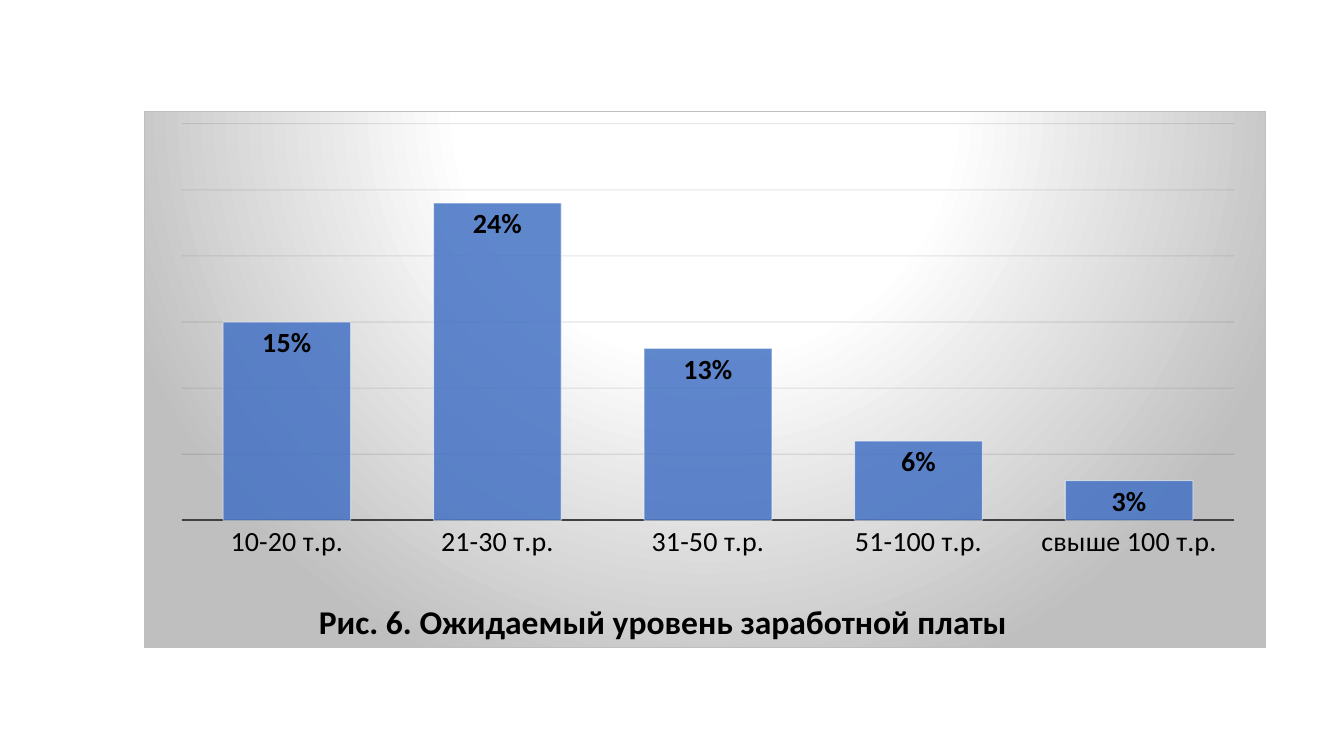
import pptx
import pptx.chart.data
import pptx.dml.color
import pptx.enum.chart
import pptx.oxml
import pptx.oxml.ns
import pptx.util
from pptx.util import Inches

FONT = "Calibri"
CAPTION = "Рис. 6. Ожидаемый уровень заработной платы"
SALARY_SHARES = {
    "10-20 т.р.": 0.15,
    "21-30 т.р.": 0.24,
    "31-50 т.р.": 0.13,
    "51-100 т.р.": 0.06,
    "свыше 100 т.р.": 0.03,
}


def color(value):
    return pptx.dml.color.RGBColor.from_string(value)


def set_font(font, size, bold=False):
    font.name = FONT
    font.size = pptx.util.Pt(size)
    font.bold = bold
    font.color.rgb = color("000000")


def set_fill(fill, value):
    fill.solid()
    fill.fore_color.rgb = color(value)


def set_line(line, value, width):
    set_fill(line.fill, value)
    line.width = pptx.util.Pt(width)


def set_opacity(element, percent):
    """Make every colour inside the XML element partly transparent."""
    for rgb in element.xpath(".//a:srgbClr"):
        alpha = pptx.oxml.parse_xml(
            f'<a:alpha {pptx.oxml.ns.nsdecls("a")} val="{percent * 1000}"/>')
        rgb.append(alpha)


def set_layout(element, index, **parts):
    """Place a chart part by hand, in fractions of the chart area."""
    for layout in element.xpath("./c:layout"):
        element.remove(layout)
    values = "".join(f'<c:{name} val="{value}"/>' for name, value in parts.items())
    element.insert(index, pptx.oxml.parse_xml(
        f'<c:layout {pptx.oxml.ns.nsdecls("c")}>'
        f"<c:manualLayout>{values}</c:manualLayout></c:layout>"))


def set_radial_background(chart):
    stops = "".join(
        f'<a:gs pos="{position * 1000}"><a:srgbClr val="{value}"/></a:gs>'
        for position, value in ((0, "FFFFFF"), (39, "FFFFFF"), (100, "BFBFBF")))
    background = pptx.oxml.parse_xml(
        f'<c:spPr {pptx.oxml.ns.nsdecls("c", "a")}>'
        f'<a:gradFill><a:gsLst>{stops}</a:gsLst><a:path path="circle">'
        '<a:fillToRect l="50000" t="-80000" r="50000" b="180000"/></a:path></a:gradFill>'
        '<a:ln w="9525"><a:solidFill><a:srgbClr val="BFBFBF"/></a:solidFill></a:ln>'
        "</c:spPr>")
    chart.element.xpath("./c:chart")[0].addnext(background)


def format_title(chart):
    chart.has_title = True
    paragraph = chart.chart_title.text_frame.paragraphs[0]
    paragraph.text = CAPTION
    set_font(paragraph.runs[0].font, 24, bold=True)
    set_layout(chart.element.xpath("./c:chart/c:title")[0], 1,
               xMode="edge", yMode="edge", x=0.15, y=0.9)


def format_axes(chart):
    category_axis = chart.category_axis
    category_axis.major_tick_mark = pptx.enum.chart.XL_TICK_MARK.NONE
    set_font(category_axis.tick_labels.font, 20)
    set_line(category_axis.format.line, "404040", 1.5)

    value_axis = chart.value_axis
    value_axis.visible = False
    value_axis.minimum_scale = 0
    value_axis.maximum_scale = 0.3
    value_axis.major_unit = 0.05
    value_axis.has_major_gridlines = True
    set_line(value_axis.major_gridlines.format.line, "0D0D0D", 0.75)
    set_opacity(chart.element.xpath(".//c:majorGridlines")[0], 10)


def format_columns(plot):
    plot.gap_width = 65
    plot.vary_by_categories = False
    series = plot.series[0]
    set_fill(series.format.fill, "4472C4")
    set_opacity(series.format.fill._xPr, 85)
    set_line(series.format.line, "FFFFFF", 0.75)
    set_opacity(series.format.line._ln, 50)
    labels = series.data_labels
    labels.show_value = True
    labels.number_format = "0%"
    labels.number_format_is_linked = False
    labels.position = pptx.enum.chart.XL_LABEL_POSITION.INSIDE_END
    set_font(labels.font, 20, bold=True)


def add_salary_chart(slide):
    data = pptx.chart.data.CategoryChartData(number_format="0%")
    data.categories = list(SALARY_SHARES)
    data.add_series("Series 1", list(SALARY_SHARES.values()))
    chart = slide.shapes.add_chart(
        pptx.enum.chart.XL_CHART_TYPE.COLUMN_CLUSTERED,
        Inches(1.43), Inches(1.1), Inches(11.13), Inches(5.39), data).chart
    set_font(chart.font, 20)
    chart.has_legend = False
    format_title(chart)
    format_axes(chart)
    format_columns(chart.plots[0])
    set_layout(chart.element.xpath(".//c:plotArea")[0], 0, layoutTarget="inner",
               xMode="edge", yMode="edge", x=0.033, y=0.023, w=0.939, h=0.74)
    set_radial_background(chart)


def main():
    presentation = pptx.Presentation()
    presentation.slide_width = Inches(13.33)
    presentation.slide_height = Inches(7.5)
    slide = presentation.slides.add_slide(presentation.slide_layouts[6])
    add_salary_chart(slide)
    presentation.save("out.pptx")


if __name__ == "__main__":
    main()
